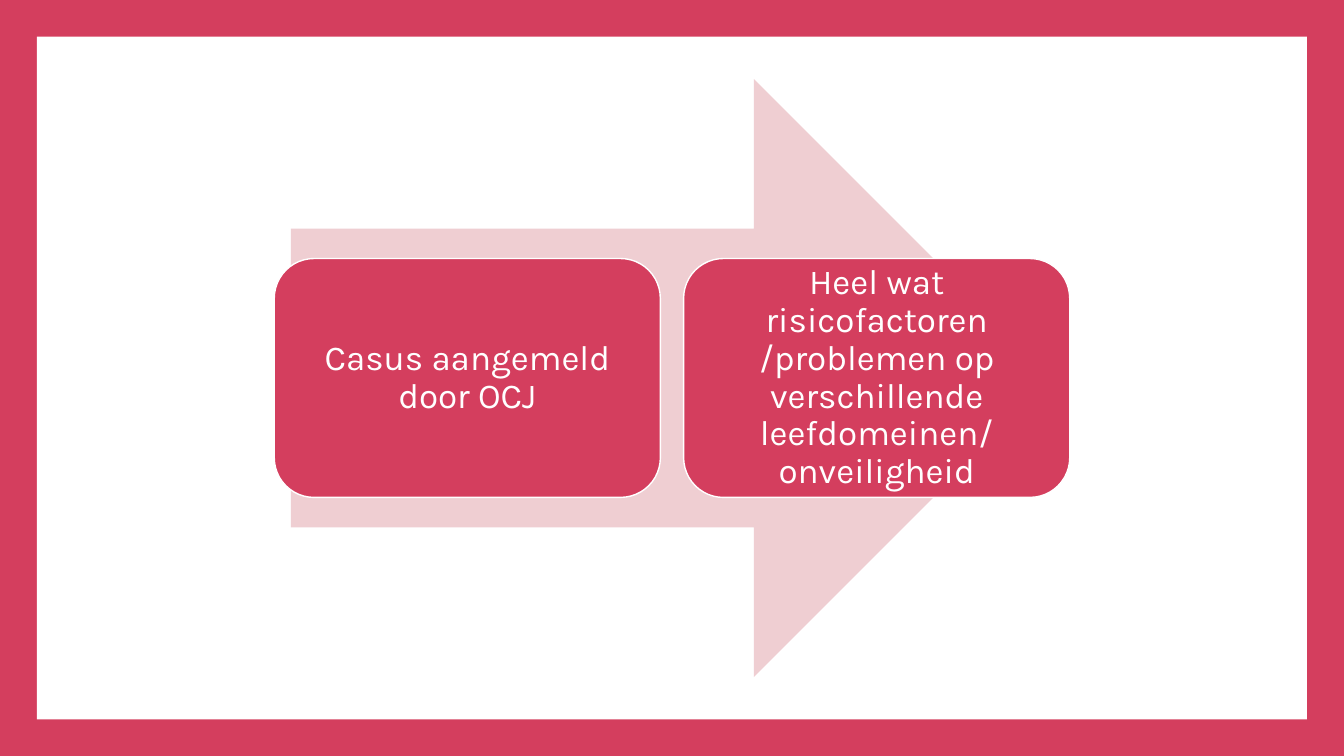
from pptx import Presentation
from pptx.dml.color import RGBColor
from pptx.enum.shapes import MSO_SHAPE
from pptx.enum.text import MSO_ANCHOR, PP_ALIGN
from pptx.util import Inches, Pt

RED, PINK, WHITE = "D43E5E", "EFCED2", "FFFFFF"

# Shares of the slide's width, in percent
CARD_WIDTH = 28.73
CARD_GAP = 1.73
CARDS = [
    "Casus aangemeld door OCJ",
    "Heel wat risicofactoren /problemen op verschillende leefdomeinen/ onveiligheid",
]


def color(hex_value):
    return RGBColor.from_string(hex_value)


class SlideBuilder:
    font_name = "Karla"
    font_size = Pt(25)
    inset = Inches(0.22)

    def __init__(self, presentation):
        self.width = presentation.slide_width
        self.height = presentation.slide_height
        self.slide = presentation.slides.add_slide(presentation.slide_layouts[6])

    def background(self, fill):
        self.slide.background.fill.solid()
        self.slide.background.fill.fore_color.rgb = color(fill)

    def block(self, kind, width, height, fill, center=50):
        """Add a vertically centred shape; lengths are percentages of the slide."""
        shape = self.slide.shapes.add_shape(
            kind,
            int(self.width * (center - width / 2) / 100),
            int(self.height * (100 - height) / 200),
            int(self.width * width / 100),
            int(self.height * height / 100),
        )
        shape.shadow.inherit = False
        shape.fill.solid()
        shape.fill.fore_color.rgb = color(fill)
        shape.line.fill.background()
        return shape

    def card(self, text, center):
        shape = self.block(MSO_SHAPE.ROUNDED_RECTANGLE, CARD_WIDTH, 31.6, RED, center)
        shape.line.color.rgb = color(WHITE)
        shape.line.width = Pt(1)

        text_frame = shape.text_frame
        text_frame.text = text
        text_frame.word_wrap = True
        text_frame.vertical_anchor = MSO_ANCHOR.MIDDLE
        text_frame.margin_left = text_frame.margin_right = self.inset
        text_frame.margin_top = text_frame.margin_bottom = self.inset

        paragraph = text_frame.paragraphs[0]
        paragraph.alignment = PP_ALIGN.CENTER
        paragraph.line_spacing = 0.9
        font = paragraph.runs[0].font
        font.name = self.font_name
        font.size = self.font_size
        font.color.rgb = color(WHITE)


def main():
    presentation = Presentation()
    presentation.slide_width = Inches(13.33)
    presentation.slide_height = Inches(7.5)
    builder = SlideBuilder(presentation)

    # Red frame around a white panel
    builder.background(RED)
    builder.block(MSO_SHAPE.RECTANGLE, 94.5, 90.3, WHITE)

    # Arrow behind the steps
    builder.block(MSO_SHAPE.RIGHT_ARROW, 56.7, 79.1, PINK)

    # Steps, spread evenly around the middle
    pitch = CARD_WIDTH + CARD_GAP
    for index, text in enumerate(CARDS):
        builder.card(text, 50 + (index - (len(CARDS) - 1) / 2) * pitch)

    presentation.save("out.pptx")


if __name__ == "__main__":
    main()
